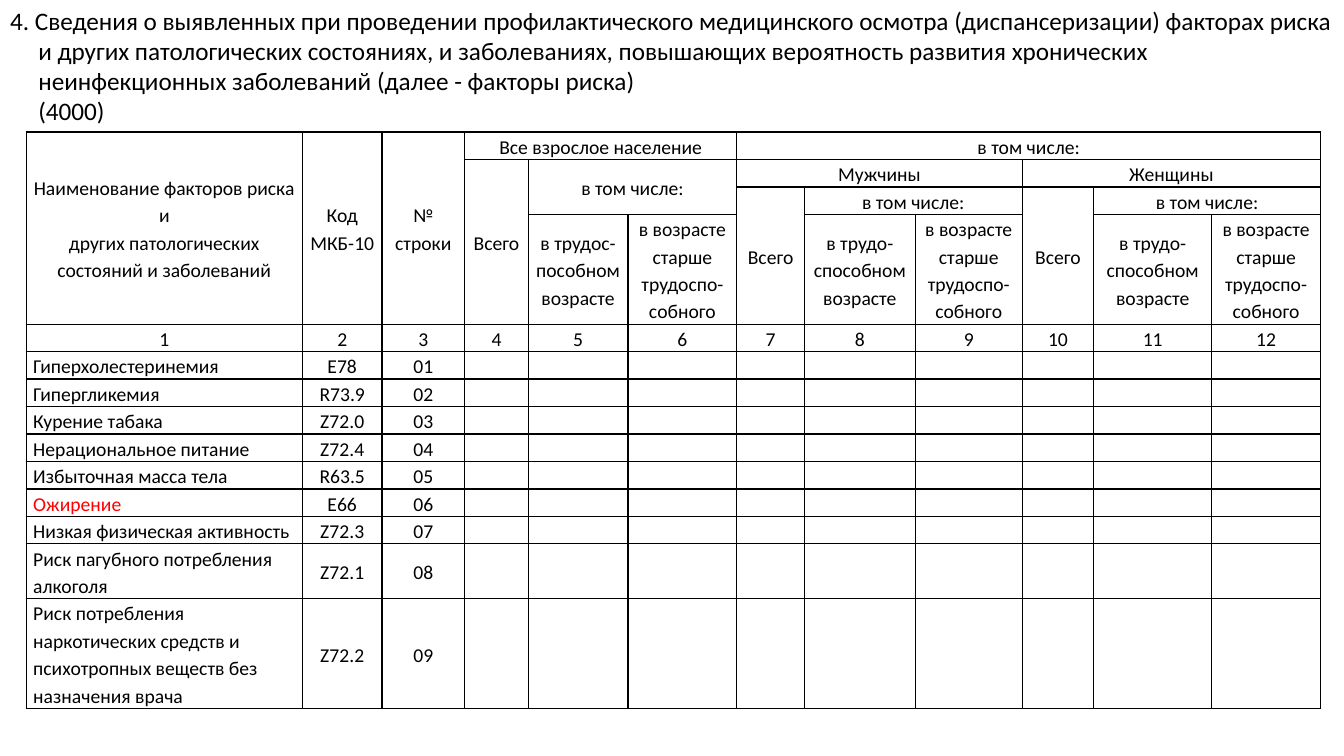
import pptx
import pptx.util
import pptx.dml.color
import pptx.enum.text
import pptx.oxml.ns
import lxml.etree

Inch = pptx.util.Inches
ALIGN = pptx.enum.text.PP_ALIGN
MIDDLE = pptx.enum.text.MSO_ANCHOR.MIDDLE
BLACK = pptx.dml.color.RGBColor(0, 0, 0)
RED = pptx.dml.color.RGBColor(255, 0, 0)
FONT = "Calibri"
WIDE, HIGH = 13.33, 7.5
LINE = 0.27  # height of one line of table text
TOP = 1.31

TITLE = [
    "4. Сведения о выявленных при проведении профилактического медицинского осмотра (диспансеризации) факторах риска",
    "и других патологических состояниях, и заболеваниях, повышающих вероятность развития хронических",
    "неинфекционных заболеваний (далее - факторы риска)",
    "(4000)",
]
COLS = [2.74, 0.79, 0.82, 0.63, 0.99, 1.08, 0.67, 1.1, 1.06, 0.71, 1.17, 1.08]
LINES = [1, 1, 1, 4] + [1] * 8 + [2, 4]  # text lines in each row

# row, column, rows spanned, columns spanned, text
HEADS = [
    (0, 0, 4, 1, "Наименование факторов риска и\nдругих патологических состояний и заболеваний"),
    (0, 1, 4, 1, "Код МКБ-10"),
    (0, 2, 4, 1, "№ строки"),
    (0, 3, 1, 3, "Все взрослое население"),
    (0, 6, 1, 6, "в том числе:"),
    (1, 3, 3, 1, "Всего"),
    (1, 4, 2, 2, "в том числе:"),
    (1, 6, 1, 3, "Мужчины"),
    (1, 9, 1, 3, "Женщины"),
    (3, 4, 1, 1, "в трудос-пособном возрасте"),
    (3, 5, 1, 1, "в возрасте старше трудоспо-собного"),
]
for col in (6, 9):
    HEADS += [
        (2, col, 2, 1, "Всего"),
        (2, col + 1, 1, 2, "в том числе:"),
        (3, col + 1, 1, 1, "в трудо-способном возрасте"),
        (3, col + 2, 1, 1, "в возрасте старше трудоспо-собного"),
    ]

RISKS = [
    ("Гиперхолестеринемия", "Е78"),
    ("Гипергликемия", "R73.9"),
    ("Курение табака", "Z72.0"),
    ("Нерациональное питание", "Z72.4"),
    ("Избыточная масса тела", "R63.5"),
    ("Ожирение", "Е66"),
    ("Низкая физическая активность", "Z72.3"),
    ("Риск пагубного потребления алкоголя", "Z72.1"),
    ("Риск потребления наркотических средств и психотропных веществ без назначения врача", "Z72.2"),
]


def write(frame, text, size=14, align=ALIGN.CENTER, color=BLACK, space=1.15):
    frame.text = text
    for para in frame.paragraphs:
        para.alignment = align
        para.line_spacing = space
        for run in para.runs:
            run.font.name = FONT
            run.font.size = pptx.util.Pt(size)
            run.font.color.rgb = color


def frame_cell(cell):
    """Give a cell thin black borders, no fill, tight margins and small empty text."""
    props = cell._tc.get_or_add_tcPr()
    for side in ("lnL", "lnR", "lnT", "lnB"):
        edge = lxml.etree.SubElement(props, pptx.oxml.ns.qn("a:" + side), w="12700")
        fill = lxml.etree.SubElement(edge, pptx.oxml.ns.qn("a:solidFill"))
        lxml.etree.SubElement(fill, pptx.oxml.ns.qn("a:srgbClr"), val=str(BLACK))
    cell.fill.background()
    cell.vertical_anchor = MIDDLE
    cell.margin_left = cell.margin_right = Inch(0.07)
    cell.margin_top = cell.margin_bottom = 0
    para = cell.text_frame.paragraphs[0]
    lxml.etree.SubElement(para._p, pptx.oxml.ns.qn("a:endParaRPr"), sz="1400")


deck = pptx.Presentation()
deck.slide_width, deck.slide_height = Inch(WIDE), Inch(HIGH)
slide = deck.slides.add_slide(deck.slide_layouts[5])

title = slide.shapes.title
title.left, title.top, title.width, title.height = 0, 0, Inch(WIDE), Inch(TOP)
head = title.text_frame
write(head, "\n".join(TITLE), size=18, align=ALIGN.LEFT, space=1.0)
head.word_wrap = True
head.auto_size = pptx.enum.text.MSO_AUTO_SIZE.NONE
head.vertical_anchor = pptx.enum.text.MSO_ANCHOR.TOP
for para in head.paragraphs[1:3]:
    para._p.get_or_add_pPr().set("marL", str(Inch(0.28)))

table = slide.shapes.add_table(
    len(LINES), len(COLS), Inch(0.26), Inch(TOP),
    Inch(sum(COLS)), Inch(LINE * sum(LINES))).table
table.first_row = table.horz_banding = False
for col, width in zip(table.columns, COLS):
    col.width = Inch(width)
for row, count in zip(table.rows, LINES):
    row.height = Inch(LINE * count)
for cell in table.iter_cells():
    frame_cell(cell)

for row, col, down, wide, text in HEADS:
    cell = table.cell(row, col)
    if down * wide > 1:
        cell.merge(table.cell(row + down - 1, col + wide - 1))
    write(cell.text_frame, text)
for col in range(len(COLS)):
    write(table.cell(4, col).text_frame, str(col + 1))
for num, (name, code) in enumerate(RISKS, 1):
    row = num + 4
    write(table.cell(row, 0).text_frame, name, align=ALIGN.LEFT,
          color=RED if name == "Ожирение" else BLACK)
    write(table.cell(row, 1).text_frame, code)
    write(table.cell(row, 2).text_frame, f"{num:02}")

deck.save("out.pptx")
